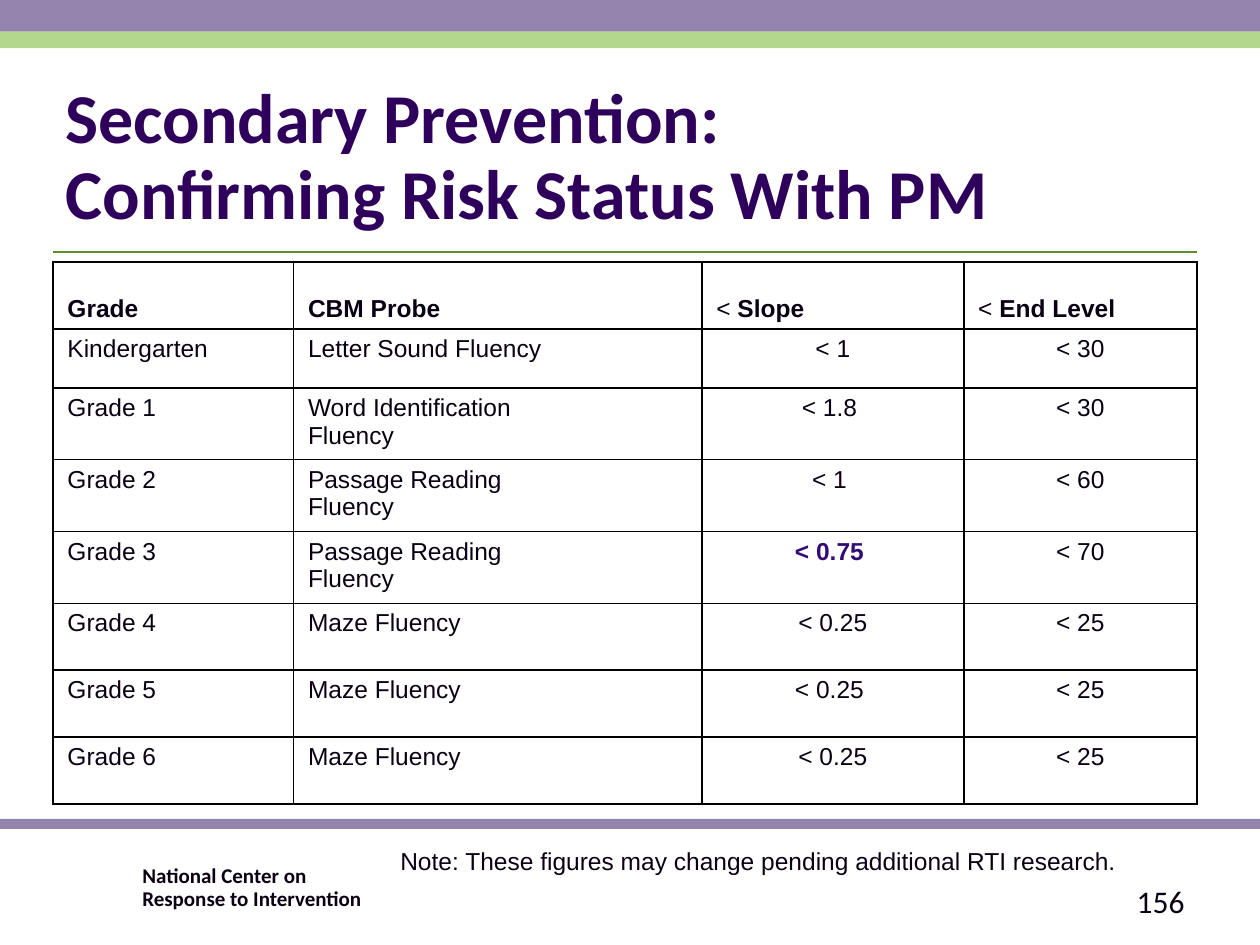
from lxml.etree import SubElement
from pptx import Presentation
from pptx.dml.color import RGBColor
from pptx.enum.shapes import MSO_CONNECTOR as Connector, MSO_SHAPE as Shape
from pptx.enum.text import MSO_ANCHOR as Anchor, PP_ALIGN as Align
from pptx.oxml.ns import qn
from pptx.util import Cm, Pt

INK, TITLE, ACCENT = "0A0014", "2E005C", "320B75"
PURPLE, GREEN, RULE = "9284AC", "B4D88B", "608F2D"
WHITE, BLACK = "FFFFFF", "000000"
WIDTH, HEIGHT = 25.4, 19.05
LEFT, CONTENT_WIDTH = 1.07, 23.06

COLUMN_WIDTHS = [4.85, 8.23, 5.28, 4.7]
ROW_HEIGHTS = [1.35, 1.19] + [1.35] * 6
HEADERS = [("", "Grade"), ("", "CBM Probe"), ("< ", "Slope"), ("< ", "End Level")]
ROWS = [
    ("Kindergarten", "Letter Sound Fluency", "< 1", "< 30"),
    ("Grade 1", "Word Identification\nFluency", "< 1.8 ", "< 30"),
    ("Grade 2", "Passage Reading\nFluency", "< 1 ", "< 60"),
    ("Grade 3", "Passage Reading\nFluency", "< 0.75 ", "< 70"),
    ("Grade 4", "Maze Fluency", "< 0.25", "< 25"),
    ("Grade 5", "Maze Fluency", "< 0.25 ", "< 25"),
    ("Grade 6", "Maze Fluency", "< 0.25", "< 25"),
]
HIGHLIGHT = (4, 2)


def rgb(value):
    return RGBColor.from_string(value)


def write(frame, text, lead="", font="Arial", size=14, color=INK, bold=False,
          align=Align.LEFT, spacing=None, hanging=None):
    """Fill a frame; \\n starts a paragraph, \\v breaks a line, lead is never bold."""
    frame.text = text
    for para in frame.paragraphs:
        para.alignment = align
        if spacing:
            para.line_spacing = spacing
        if hanging:
            properties = para._p.get_or_add_pPr()
            properties.set("marL", str(Cm(hanging)))
            properties.set("indent", str(-Cm(hanging)))
        if lead:
            body = para.runs[0]
            body.text = lead
            para.add_run().text = text
        for span in para.runs:
            span.font.name = font
            span.font.size = Pt(size)
            span.font.color.rgb = rgb(color)
            span.font.bold = bold and not (lead and span.text == lead)


def add_text(page, box, text, anchor=Anchor.TOP, margin=None, **style):
    frame = page.shapes.add_textbox(*map(Cm, box)).text_frame
    frame.word_wrap = True
    frame.vertical_anchor = anchor
    if margin is not None:
        frame.margin_left = frame.margin_right = Cm(margin)
        frame.margin_top = frame.margin_bottom = Cm(margin)
    write(frame, text, **style)


def add_band(page, top, height, color):
    band = page.shapes.add_shape(Shape.RECTANGLE, 0, Cm(top), Cm(WIDTH), Cm(height))
    band.shadow.inherit = False
    band.fill.solid()
    band.fill.fore_color.rgb = rgb(color)
    band.line.fill.background()


def add_rule(page, left, top, width):
    rule = page.shapes.add_connector(
        Connector.STRAIGHT, Cm(left), Cm(top), Cm(left + width), Cm(top))
    rule.line.color.rgb = rgb(RULE)
    rule.line.width = Pt(0.75)
    SubElement(rule._element.spPr, qn("a:effectLst"))


def add_header(page, left, top, width):
    add_band(page, 0, 0.64, PURPLE)
    add_band(page, 0.64, 0.33, GREEN)
    add_text(page, (left, top, width, 2.74),
             "Secondary Prevention:\vConfirming Risk Status With PM",
             anchor=Anchor.BOTTOM, font="Calibri", size=40, color=TITLE,
             bold=True, spacing=0.9)
    add_rule(page, left, top + 2.97, width)


def style_cell(cell, anchor):
    cell.vertical_anchor = anchor
    cell.margin_left = cell.margin_right = Cm(0.29)
    cell.margin_top = cell.margin_bottom = Cm(0.13)
    properties = cell._tc.get_or_add_tcPr()
    for side in ("lnL", "lnR", "lnT", "lnB"):
        border = SubElement(properties, qn(f"a:{side}"), w=str(Pt(1)))
        fill = SubElement(border, qn("a:solidFill"))
        SubElement(fill, qn("a:srgbClr"), val=BLACK)
    cell.fill.solid()
    cell.fill.fore_color.rgb = rgb(WHITE)


def add_cutoff_table(page, left, top, width):
    table = page.shapes.add_table(
        len(ROW_HEIGHTS), len(COLUMN_WIDTHS), Cm(left), Cm(top),
        Cm(width), Cm(sum(ROW_HEIGHTS))).table
    table.first_row = table.horz_banding = False
    for column, column_width in zip(table.columns, COLUMN_WIDTHS):
        column.width = Cm(column_width)
    for row, row_height in zip(table.rows, ROW_HEIGHTS):
        row.height = Cm(row_height)

    for column, (lead, label) in enumerate(HEADERS):
        cell = table.cell(0, column)
        style_cell(cell, Anchor.BOTTOM)
        write(cell.text_frame, label, lead=lead, bold=True, hanging=0.97)
    for row, values in enumerate(ROWS, start=1):
        for column, value in enumerate(values):
            cell = table.cell(row, column)
            marked = (row, column) == HIGHLIGHT
            style_cell(cell, Anchor.TOP)
            write(cell.text_frame, value, bold=marked, hanging=0.97,
                  color=ACCENT if marked else INK,
                  align=Align.CENTER if column > 1 else Align.LEFT)


def add_footer(page, top):
    add_band(page, top, 0.2, PURPLE)
    add_text(page, (2.77, top + 0.84, 8.23, 0.76),
             "National Center on \vResponse to Intervention",
             margin=0.1, font="Calibri", size=12, bold=True, spacing=0.9)
    add_text(page, (7.82, top + 0.43, 17.5, 0.84),
             "Note: These figures may change pending additional RTI research.")
    add_text(page, (18.21, top + 1.14, 5.92, 1.02), "156",
             anchor=Anchor.MIDDLE, font="Calibri", size=18, align=Align.RIGHT)


def main():
    deck = Presentation()
    deck.slide_width, deck.slide_height = Cm(WIDTH), Cm(HEIGHT)
    page = deck.slides.add_slide(deck.slide_layouts[6])
    add_header(page, LEFT, 2.11, CONTENT_WIDTH)
    add_cutoff_table(page, LEFT, 5.28, CONTENT_WIDTH)
    add_footer(page, 16.51)
    deck.save("out.pptx")


if __name__ == "__main__":
    main()
